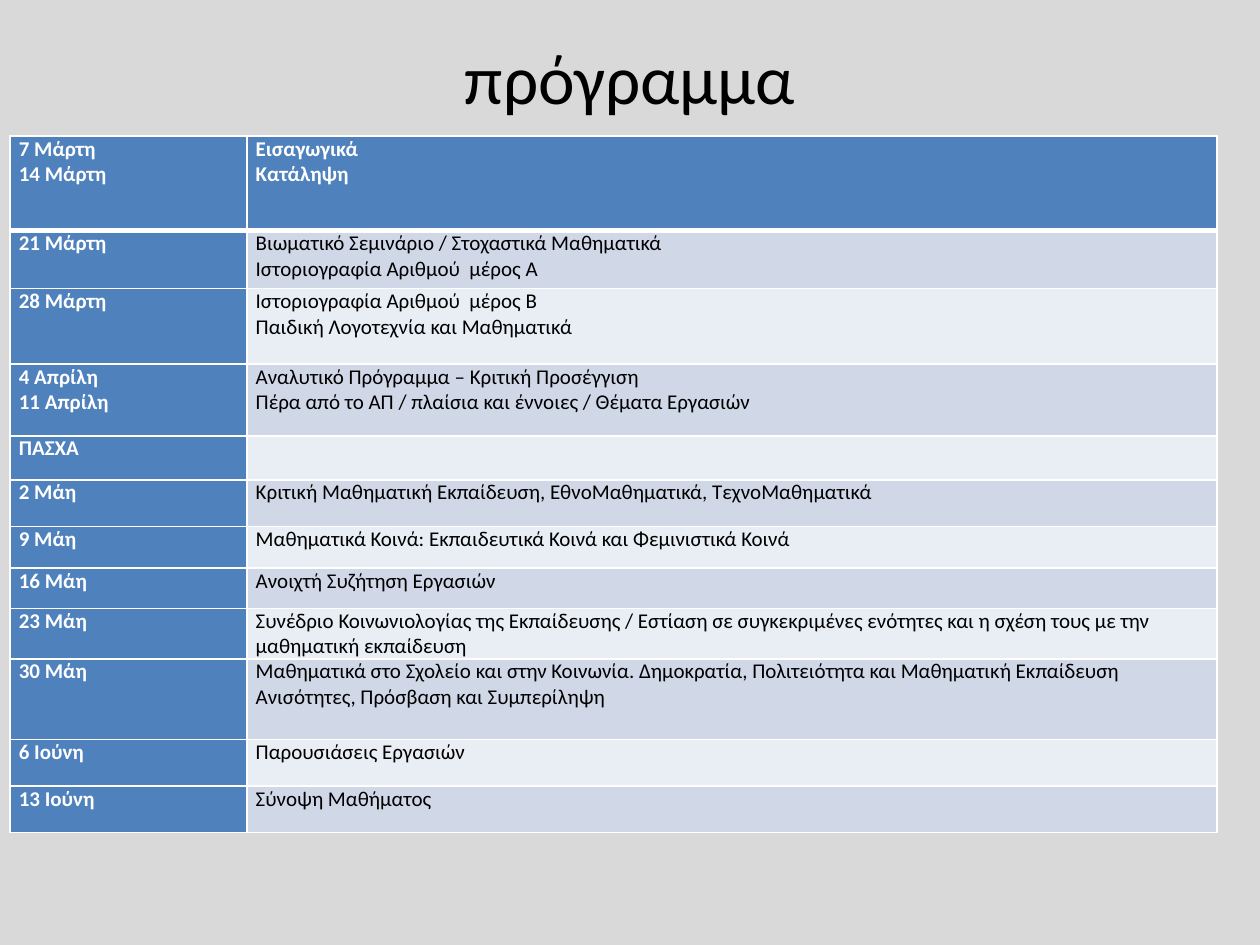
from lxml import etree
from pptx import Presentation
from pptx.dml.color import RGBColor
from pptx.enum.text import MSO_ANCHOR, PP_ALIGN
from pptx.oxml.ns import qn
from pptx.util import Inches, Pt

MIDDLE = MSO_ANCHOR.MIDDLE
CENTER = PP_ALIGN.CENTER
BACKGROUND = RGBColor(0xD9, 0xD9, 0xD9)
BLUE = RGBColor(0x4F, 0x81, 0xBD)
DARK_BAND = RGBColor(0xD0, 0xD8, 0xE8)
LIGHT_BAND = RGBColor(0xE9, 0xED, 0xF4)
WHITE = RGBColor(0xFF, 0xFF, 0xFF)
BLACK = RGBColor(0x00, 0x00, 0x00)

TITLE_FORMAT = {"name": "Calibri", "size": Pt(39.6)}
HEADING_FORMAT = {"name": "Calibri", "size": Pt(12), "bold": True}
BODY_FORMAT = {"name": "Calibri", "size": Pt(12), "bold": False}
CELL_MARGINS = {
    "margin_left": Inches(0.07),
    "margin_right": Inches(0.07),
    "margin_top": 0,
    "margin_bottom": 0,
}
COLUMN_WIDTHS = [1.88, 7.7]
SCHEDULE = [
    (0.75, "7 Μάρτη\n14 Μάρτη", "Εισαγωγικά\nΚατάληψη"),
    (0.46, "21 Μάρτη", "Βιωματικό Σεμινάριο / Στοχαστικά Μαθηματικά\nΙστοριογραφία Αριθμού  μέρος Α"),
    (0.6, "28 Μάρτη", "Ιστοριογραφία Αριθμού  μέρος Β\nΠαιδική Λογοτεχνία και Μαθηματικά"),
    (0.57, "4 Απρίλη\n11 Απρίλη",
     "Αναλυτικό Πρόγραμμα – Κριτική Προσέγγιση\nΠέρα από το ΑΠ / πλαίσια και έννοιες / Θέματα Εργασιών"),
    (0.35, "ΠΑΣΧΑ", ""),
    (0.37, "2 Μάη", "Κριτική Μαθηματική Εκπαίδευση, ΕθνοΜαθηματικά, ΤεχνοΜαθηματικά"),
    (0.33, "9 Μάη", "Μαθηματικά Κοινά: Εκπαιδευτικά Κοινά και Φεμινιστικά Κοινά"),
    (0.32, "16 Μάη", "Ανοιχτή Συζήτηση Εργασιών"),
    (0.4, "23 Μάη",
     "Συνέδριο Κοινωνιολογίας της Εκπαίδευσης / Εστίαση σε συγκεκριμένες ενότητες "
     "και η σχέση τους με την μαθηματική εκπαίδευση"),
    (0.64, "30 Μάη",
     "Μαθηματικά στο Σχολείο και στην Κοινωνία. Δημοκρατία, Πολιτειότητα και Μαθηματική Εκπαίδευση\n"
     "Ανισότητες, Πρόσβαση και Συμπερίληψη"),
    (0.37, "6 Ιούνη", "Παρουσιάσεις Εργασιών"),
    (0.37, "13 Ιούνη", "Σύνοψη Μαθήματος"),
]


def format_text(text_frame, values, color):
    for paragraph in text_frame.paragraphs:
        for run in paragraph.runs:
            for name, value in values.items():
                setattr(run.font, name, value)
            run.font.color.rgb = color


def add_border(cell, side, width):
    line = etree.SubElement(cell._tc.get_or_add_tcPr(), qn(f"a:ln{side}"), w=str(Pt(width)))
    fill = etree.SubElement(line, qn("a:solidFill"))
    etree.SubElement(fill, qn("a:srgbClr"), val=str(WHITE))


presentation = Presentation()
presentation.slide_width = Inches(10)
presentation.slide_height = Inches(7.5)
slide = presentation.slides.add_slide(presentation.slide_layouts[6])
slide.background.fill.solid()
slide.background.fill.fore_color.rgb = BACKGROUND

title = slide.shapes.add_textbox(Inches(0.5), Inches(0.3), Inches(9), Inches(0.62))
title_frame = title.text_frame
title_frame.word_wrap = True
title_frame.vertical_anchor = MIDDLE
title_frame.text = "πρόγραμμα"
title_frame.paragraphs[0].alignment = CENTER
format_text(title_frame, TITLE_FORMAT, BLACK)

table = slide.shapes.add_table(
    len(SCHEDULE), len(COLUMN_WIDTHS), Inches(0.08), Inches(1.08),
    Inches(sum(COLUMN_WIDTHS)), Inches(sum(row[0] for row in SCHEDULE)),
).table
for column, width in zip(table.columns, COLUMN_WIDTHS):
    column.width = Inches(width)

for row_index, (height, *texts) in enumerate(SCHEDULE):
    table.rows[row_index].height = Inches(height)
    band = DARK_BAND if row_index % 2 else LIGHT_BAND
    for column_index, text in enumerate(texts):
        cell = table.cell(row_index, column_index)
        is_heading = row_index == 0 or column_index == 0
        for name, value in CELL_MARGINS.items():
            setattr(cell, name, value)
        cell.text = text
        format_text(cell.text_frame, HEADING_FORMAT if is_heading else BODY_FORMAT,
                    WHITE if is_heading else BLACK)
        for side in "LRTB":
            below_header = (row_index, side) in ((0, "B"), (1, "T"))
            add_border(cell, side, 3 if below_header else 1)
        cell.fill.solid()
        cell.fill.fore_color.rgb = BLUE if is_heading else band

presentation.save("out.pptx")
